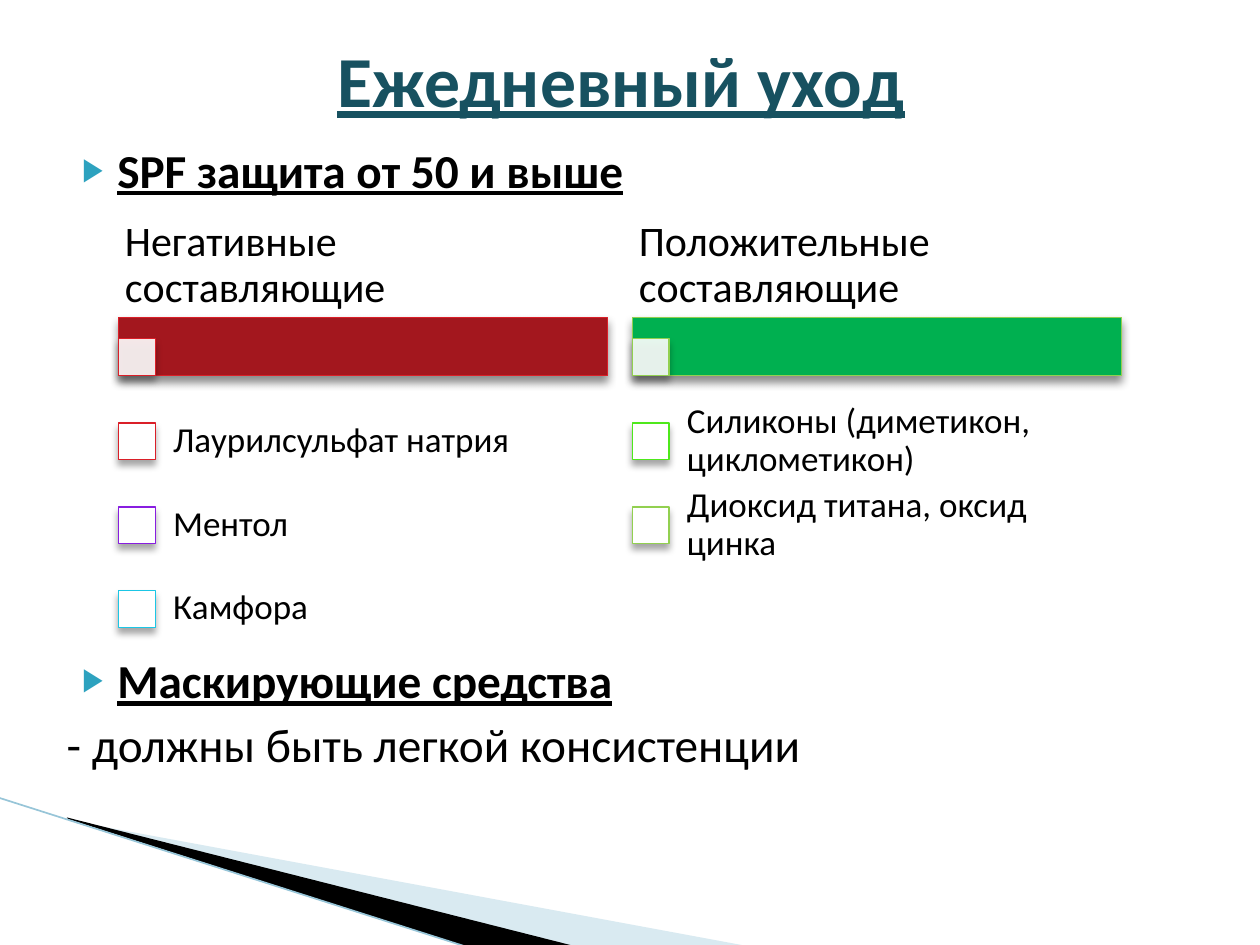
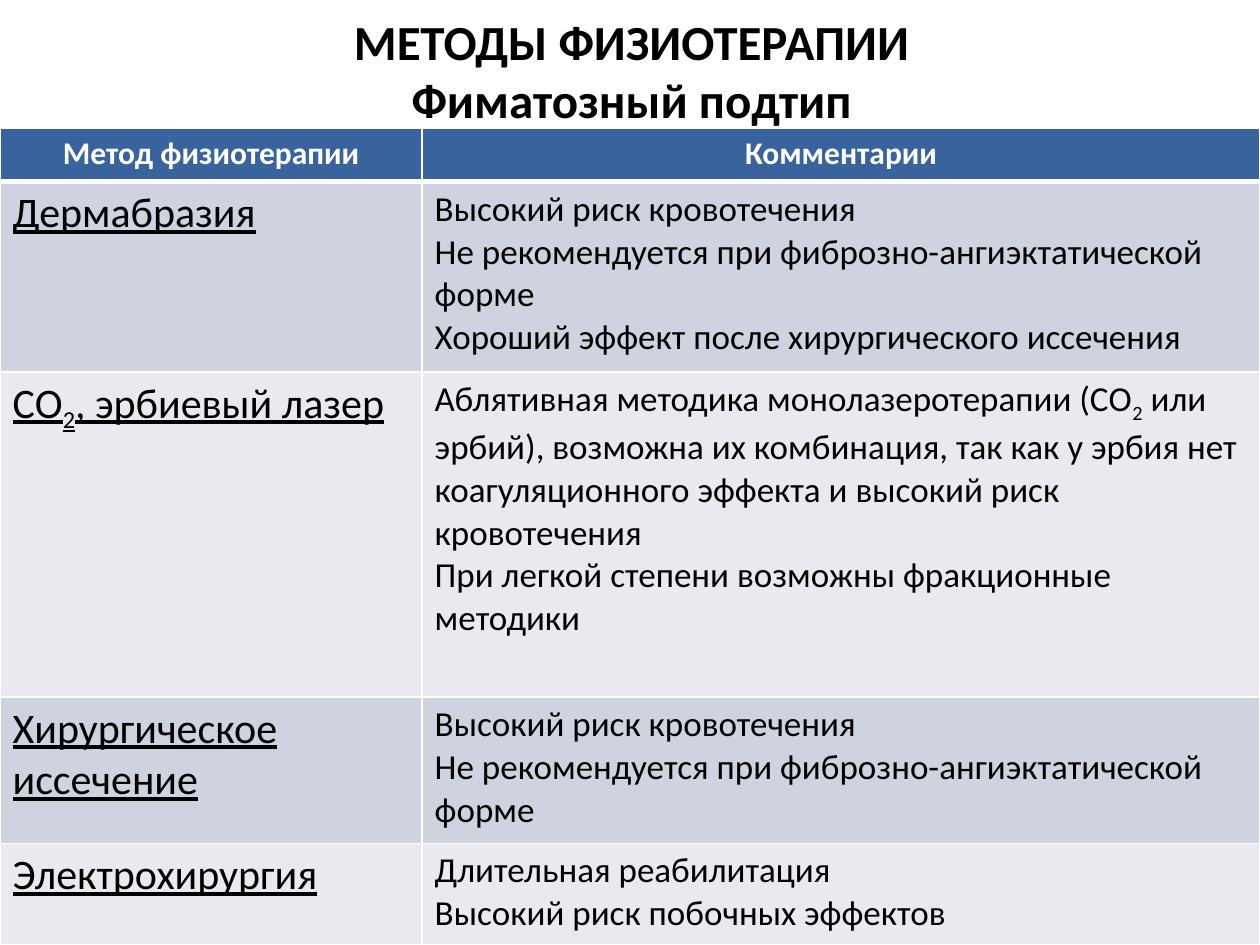
import dataclasses

import lxml.etree
import pptx
import pptx.dml.color
import pptx.enum.shapes
import pptx.enum.text
import pptx.oxml.ns
import pptx.util

Cm = pptx.util.Cm
Pt = pptx.util.Pt
qn = pptx.oxml.ns.qn
rgb = pptx.dml.color.RGBColor.from_string
tag = lxml.etree.SubElement


@dataclasses.dataclass
class Theme:
    font: str = "Calibri"
    black: str = "000000"
    white: str = "FFFFFF"
    title: str = "175160"
    bullet: str = "2DA2BF"
    wedge: str = "A0CBDC"
    wedge_line: str = "97C5D8"
    header: str = "39639D"
    bands: tuple = ("CED3DF", "E8EAEF")
    title_size: int = 41
    table_title_size: int = 28
    body_size: int = 27
    heading_size: int = 24
    text_size: int = 20
    header_size: int = 18


theme = Theme()


def write(para, text, size, color=theme.black, **format_values):
    values = {"name": theme.font, "size": Pt(size), "bold": False, **format_values}
    for position, part in enumerate(text.split("_")):
        for line_number, line in enumerate(part.split("\n")):
            if line_number:
                para.add_line_break()
            span = para.add_run()
            span.text = line
            for name, value in values.items():
                setattr(span.font, name, value)
            span.font.color.rgb = rgb(color)
            if position % 2:
                span.font._element.set("baseline", "-25000")


def paint(shape, fill, line=None, opacity=100, shadow=None):
    shape.shadow.inherit = False
    shape.fill.solid()
    shape.fill.fore_color.rgb = rgb(fill)
    properties = shape._element.spPr
    if opacity < 100:
        color = properties.find(qn("a:solidFill"))[0]
        tag(color, qn("a:alpha"), val=str(opacity * 1000))
    if line:
        shape.line.color.rgb = rgb(line)
        shape.line.width = Pt(0.75)
    else:
        shape.line.fill.background()
    if shadow:
        strength, blur = shadow
        outer = tag(properties.find(qn("a:effectLst")), qn("a:outerShdw"),
                    blurRad=str(Pt(blur)), dist=str(Pt(3)), dir="5400000", rotWithShape="0")
        color = tag(outer, qn("a:srgbClr"), val=theme.black)
        tag(color, qn("a:alpha"), val=str(strength * 1000))


deck = pptx.Presentation()
deck.slide_width, deck.slide_height = Cm(25.4), Cm(19.05)

care_page = deck.slides.add_slide(deck.slide_layouts[1])
methods_page = deck.slides.add_slide(deck.slide_layouts[5])

wedges = [
    (theme.wedge, 40, [(1.4, 16.54), (15.11, 19.08), (11.58, 19.08), (1.4, 16.51)]),
    (theme.black, 100, [(1.35, 16.48), (11.61, 19.08), (9.45, 19.1), (1.37, 16.51)]),
]
titles = [
    (care_page, "Ежедневный уход", (1.09, 0, 22.86, 3.18),
     theme.title_size, theme.title, True),
    (methods_page, "МЕТОДЫ ФИЗИОТЕРАПИИ\nФиматозный подтип", (1.3, 0, 22.86, 2.82),
     theme.table_title_size, theme.black, False),
]
for page, text, place, size, color, underline in titles:
    for fill, opacity, points in wedges:
        corners = [(Cm(x), Cm(y)) for x, y in points]
        builder = page.shapes.build_freeform(*corners[0], scale=1.0)
        builder.add_line_segments(corners[1:], close=True)
        paint(builder.convert_to_shape(), fill, opacity=opacity)
    edge = page.shapes.add_connector(pptx.enum.shapes.MSO_CONNECTOR.STRAIGHT,
                                     Cm(-0.03), Cm(16.08), Cm(9.45), Cm(19.1))
    edge.line.color.rgb = rgb(theme.wedge_line)
    edge.line.width = Pt(0.95)
    tag(edge._element.spPr, qn("a:effectLst"))

    title = page.shapes.title
    title.left, title.top, title.width, title.height = map(Cm, place)
    frame = title.text_frame
    frame.auto_size = pptx.enum.text.MSO_AUTO_SIZE.NONE
    frame.vertical_anchor = pptx.enum.text.MSO_ANCHOR.MIDDLE
    para = frame.paragraphs[0]
    para.alignment = pptx.enum.text.PP_ALIGN.CENTER
    write(para, text, size, color, bold=True, underline=underline)

body = care_page.placeholders[1]
body.left, body.top, body.width, body.height = Cm(1.09), Cm(2.72), Cm(22.86), Cm(13.49)
frame = body.text_frame
frame.auto_size = pptx.enum.text.MSO_AUTO_SIZE.NONE
care_points = [
    ("SPF защита от 50 и выше", 0, True),
    ("Маскирующие средства", 259, True),
    ("- должны быть легкой консистенции", 4, False),
]
for number, (text, gap, is_heading) in enumerate(care_points):
    para = frame.add_paragraph() if number else frame.paragraphs[0]
    para.space_before = Pt(gap)
    settings = para._element.get_or_add_pPr()
    settings.set("marL", str(Cm(1.02) if is_heading else 0))
    settings.set("indent", str(Cm(-0.71) if is_heading else 0))
    if is_heading:
        tag(tag(settings, qn("a:buClr")), qn("a:srgbClr"), val=theme.bullet)
        tag(settings, qn("a:buSzPct"), val="68000")
        tag(settings, qn("a:buChar"), char="▶")
    else:
        tag(settings, qn("a:buNone"))
    write(para, text, theme.body_size, bold=is_heading, underline=is_heading)

components = [
    (2.39, "Негативные составляющие", "A3171E", "DA1F28",
     [("Лаурилсульфат натрия", "DA1F28"), ("Ментол", "881DE0"), ("Камфора", "1BC6E5")]),
    (12.75, "Положительные составляющие", "00B050", "92D050",
     [("Силиконы (диметикон, циклометикон)", "4EE81B"),
      ("Диоксид титана, оксид цинка", "92D050")]),
]
rectangle = pptx.enum.shapes.MSO_SHAPE.RECTANGLE
for left, heading, fill, outline, items in components:
    bar = care_page.shapes.add_shape(rectangle, Cm(left), Cm(6.4), Cm(9.86), Cm(1.17))
    paint(bar, fill, outline, shadow=(45, 5))
    squares = [(6.83, outline, 90)]
    labels = [(heading, theme.heading_size, left, 4.32, 9.86, 2.08, 0.13, 0.08)]
    for row, (item, color) in enumerate(items):
        squares.append((8.53 + 1.69 * row, color, 100))
        labels.append((item, theme.text_size, left + 0.69, 8.05 + 1.69 * row,
                       9.17, 1.68, 0.41, 0.41))
    for top, color, opacity in squares:
        square = care_page.shapes.add_shape(rectangle, Cm(left), Cm(top), Cm(0.74), Cm(0.74))
        paint(square, theme.white, color, opacity, shadow=(35, 4))
    for text, size, x, y, width, height, side, edge_gap in labels:
        box = care_page.shapes.add_textbox(Cm(x), Cm(y), Cm(width), Cm(height))
        frame = box.text_frame
        frame.word_wrap = True
        frame.vertical_anchor = pptx.enum.text.MSO_ANCHOR.MIDDLE
        frame.margin_left = frame.margin_right = Cm(side)
        frame.margin_top = frame.margin_bottom = Cm(edge_gap)
        para = frame.paragraphs[0]
        para.line_spacing = 0.9
        write(para, text, size)

methods = [
    ("Метод физиотерапии", ["Комментарии"], 1.07),
    ("Дермабразия",
     ["Высокий риск кровотечения",
      "Не рекомендуется при фиброзно-ангиэктатической форме",
      "Хороший эффект после хирургического иссечения"], 3.84),
    ("СО_2_, эрбиевый лазер",
     ["Аблятивная методика монолазеротерапии (СО_2_ или эрбий), возможна их комбинация, "
      "так как у эрбия нет коагуляционного эффекта и высокий риск кровотечения",
      "При легкой степени возможны фракционные методики"], 6.55),
    ("Хирургическое иссечение",
     ["Высокий риск кровотечения",
      "Не рекомендуется при фиброзно-ангиэктатической форме"], 2.95),
    ("Электрохирургия",
     ["Длительная реабилитация", "Высокий риск побочных эффектов"], 2.05),
]
table = methods_page.shapes.add_table(len(methods), 2, Cm(0), Cm(2.59),
                                      Cm(25.4), Cm(16.46)).table
for column, width in zip(table.columns, (8.51, 16.89)):
    column.width = Cm(width)
for row, (method, comments, height) in enumerate(methods):
    table.rows[row].height = Cm(height)
    for column, lines in enumerate(([method], comments)):
        cell = table.cell(row, column)
        cell.fill.solid()
        cell.fill.fore_color.rgb = rgb(theme.bands[(row - 1) % 2] if row else theme.header)
        borders = {"L": 1, "R": 1, "T": 3 if row == 1 else 1, "B": 1 if row else 3}
        settings = cell._tc.get_or_add_tcPr()
        for order, (side, width) in enumerate(borders.items()):
            border = tag(settings, qn(f"a:ln{side}"), w=str(Pt(width)))
            tag(tag(border, qn("a:solidFill")), qn("a:srgbClr"), val=theme.white)
            settings.insert(order, border)
        for number, text in enumerate(lines):
            frame = cell.text_frame
            para = frame.add_paragraph() if number else frame.paragraphs[0]
            if row == 0:
                para.alignment = pptx.enum.text.PP_ALIGN.CENTER
                write(para, text, theme.header_size, theme.white, bold=True)
            elif column == 0:
                write(para, text, theme.heading_size, underline=True)
            else:
                write(para, text, theme.text_size)

deck.save("out.pptx")
